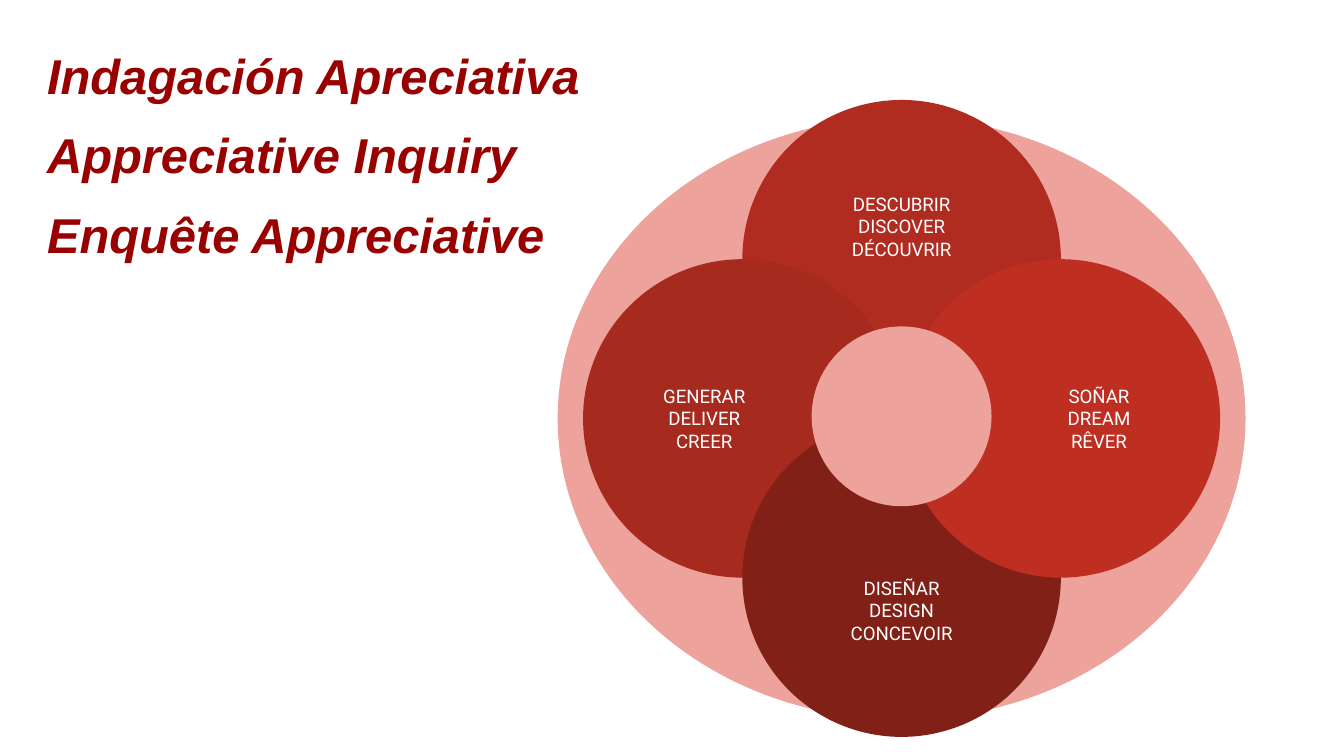
from pptx import Presentation
from pptx.dml.color import RGBColor
from pptx.enum.shapes import MSO_SHAPE as Shape
from pptx.enum.text import MSO_ANCHOR as Anchor, PP_ALIGN as Align
from pptx.util import Cm, Pt

CENTER_X, CENTER_Y = 17.04, 7.91
PETAL_SIZE = 6.02
PETAL_OFFSET = 3.01
LABEL_OFFSET_X, LABEL_OFFSET_Y = 3.73, 3.63
PALE_RED = "EDA29B"
TITLE_LINES = ["Indagación Apreciativa", "Appreciative Inquiry", "Enquête Appreciative"]
PETALS = [
    (0, -1, "B02C20", ["DESCUBRIR", "DISCOVER", "DÉCOUVRIR"]),
    (-1, 0, "A72A1E", ["GENERAR", "DELIVER", "CREER"]),
    (0, 1, "802017", ["DISEÑAR", "DESIGN", "CONCEVOIR"]),
    (1, 0, "BE2F22", ["SOÑAR", "DREAM", "RÊVER"]),
]


def color(value):
    return RGBColor.from_string(value)


def add_ellipse(shapes, center_x, center_y, width, height, fill):
    ellipse = shapes.add_shape(
        Shape.OVAL, Cm(center_x - width / 2), Cm(center_y - height / 2), Cm(width), Cm(height)
    )
    ellipse.shadow.inherit = False
    ellipse.fill.solid()
    ellipse.fill.fore_color.rgb = color(fill)
    ellipse.line.fill.background()


def add_text(shapes, left, top, width, height, lines, font_name, size, text_color):
    box = shapes.add_textbox(Cm(left), Cm(top), Cm(width), Cm(height))
    frame = box.text_frame
    frame.word_wrap = True
    frame.margin_left = frame.margin_right = Cm(0.25)
    frame.margin_top = frame.margin_bottom = Cm(0.25)
    frame.text = "\n".join(lines)
    for para in frame.paragraphs:
        for span in para.runs:
            span.font.name = font_name
            span.font.size = Pt(size)
            span.font.color.rgb = color(text_color)
    return frame


def add_title(shapes):
    frame = add_text(shapes, 0.64, 0.56, 12.06, 3.12, TITLE_LINES, "Arial", 26.2, "990000")
    for index, para in enumerate(frame.paragraphs):
        para.line_spacing = 1.04
        para.space_before = Pt(10 if index else 0)
        for span in para.runs:
            span.font.bold = True
            span.font.italic = True
    frame.paragraphs[-1].space_after = Pt(10)


def add_petal(shapes, step_x, step_y, fill, lines):
    group = shapes.add_group_shape()
    add_ellipse(
        group.shapes,
        CENTER_X + step_x * PETAL_OFFSET,
        CENTER_Y + step_y * PETAL_OFFSET,
        PETAL_SIZE,
        PETAL_SIZE,
        fill,
    )
    width, height = 4.17, 1.96
    left = CENTER_X + step_x * LABEL_OFFSET_X - width / 2
    top = CENTER_Y + step_y * LABEL_OFFSET_Y - height / 2
    frame = add_text(group.shapes, left, top, width, height, lines, "Roboto", 10, "FFFFFF")
    frame.vertical_anchor = Anchor.MIDDLE
    for para in frame.paragraphs:
        para.alignment = Align.CENTER


def main():
    deck = Presentation()
    deck.slide_width, deck.slide_height = Cm(25.4), Cm(14.29)
    page = deck.slides.add_slide(deck.slide_layouts[6])
    add_title(page.shapes)
    add_ellipse(page.shapes, CENTER_X, CENTER_Y, 13, 11.38, PALE_RED)
    for petal in PETALS:
        add_petal(page.shapes, *petal)
    add_ellipse(page.shapes, CENTER_X, 7.87, 3.4, 3.4, PALE_RED)
    deck.save("out.pptx")


if __name__ == "__main__":
    main()
